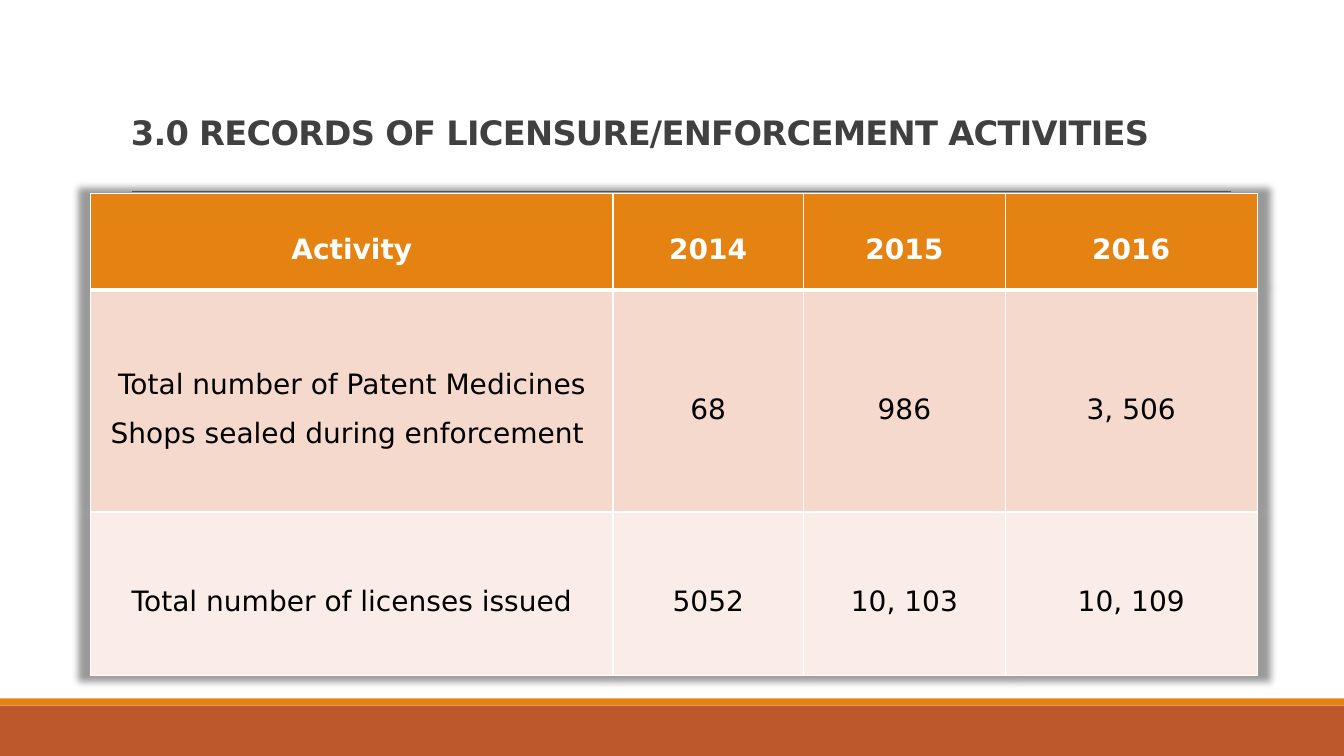
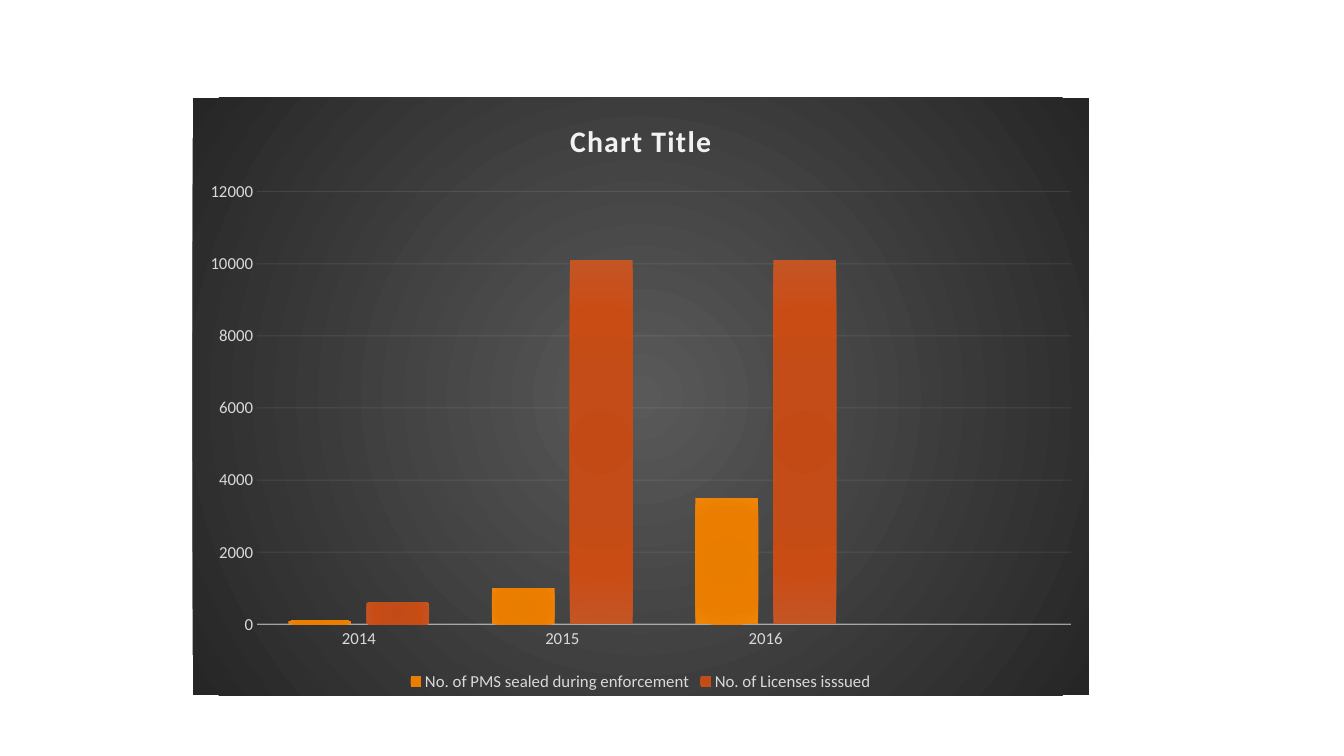
from pptx import Presentation
from pptx import util as u
from pptx.chart.data import CategoryChartData
from pptx.dml.color import RGBColor
from pptx.enum import chart as ch, shapes, text
from pptx.oxml import parse_xml
from pptx.oxml.ns import nsdecls, qn

# Content
TITLE = "3.0 RECORDS OF LICENSURE/ENFORCEMENT ACTIVITIES"
ROWS = [
    ("Activity", "2014", "2015", "2016"),
    ("Total number of Patent Medicines Shops sealed during enforcement ",
     "68", "986", "3, 506"),
    ("Total number of licenses issued", "5052", "10, 103", "10, 109"),
]
YEARS = ["2014", "2015", "2016", ""]
SERIES = [
    ("No. of PMS sealed during enforcement", (100, 1000, 3500, None), "amber"),
    ("No. of Licenses isssued", (600, 10100, 10100, None), "rust"),
]

# Style
W, H = 13.33, 7.5
HEAD, BODY = "DejaVu Sans", "Calibri"
HUES = {
    "orange": "E48312", "brick": "BD582C", "rule": "808080", "ink": "404040",
    "white": "FFFFFF", "black": "000000", "pink": "F5D9CC", "pale": "FAEDE7",
    "label": "D9D9D9", "light": "F2F2F2",
}
FADES = {
    "amber": [(0, "E57B00"), (34, "E87D00"), (70, "EB7E00"), (100, "EF8407")],
    "rust": [(0, "C44A15"), (34, "C34C18"), (70, "C94C15"), (100, "C45525")],
    "night": [(0, "595959"), (100, "262626")],
}
BANDS = [(7, 0.5, "brick"), (6.93, 0.07, "orange")]
COLS, TALL = (5.18, 1.89, 2, 2.5), (0.96, 2.2, 1.62)
FILLS = ("orange", "pink", "pale")


def hue(name):
    return RGBColor.from_string(HUES[name])


def box(*sides):
    return [u.Inches(s) for s in sides]


def style(font, size, name, face, bold=False):
    font.size, font.name, font.bold = u.Pt(size), face, bold
    font.color.rgb = hue(name)


def xml(body, tag):
    return parse_xml(f"<{tag} {nsdecls('a', 'c')}>{body}</{tag}>")


def fade(name, focus):
    stops = "".join(f'<a:gs pos="{p * 1000}"><a:srgbClr val="{c}"/></a:gs>'
                    for p, c in FADES[name])
    rect = " ".join(f'{side}="{focus * 1000}"' for side in "ltrb")
    return xml(f'<a:gsLst>{stops}</a:gsLst><a:path path="circle">'
               f'<a:fillToRect {rect}/></a:path>', "a:gradFill")


def frame(slide):
    """Footer bands and the rule under the title."""
    for top, high, name in BANDS:
        band = slide.shapes.add_shape(shapes.MSO_SHAPE.RECTANGLE,
                                      *box(0, top, W, high))
        band.shadow.inherit = False
        band.fill.solid()
        band.fill.fore_color.rgb = hue(name)
        band.line.fill.background()
    rule = slide.shapes.add_connector(shapes.MSO_CONNECTOR.STRAIGHT,
                                      *box(1.31, 1.9, 12.21, 1.9))
    rule.line.color.rgb, rule.line.width = hue("rule"), u.Pt(0.5)
    rule._element.spPr.append(xml("", "a:effectLst"))


def title(slide, words):
    frm = slide.shapes.add_textbox(*box(1.2, 0.31, 11, 1.25)).text_frame
    frm.word_wrap, frm.vertical_anchor = True, text.MSO_ANCHOR.BOTTOM
    para = frm.paragraphs[0]
    run = para.add_run()
    run.text, para.line_spacing = words, 0.85
    style(para.font, 24, "ink", HEAD, True)
    run.font._element.set("spc", "-50")


def edge(cell, row):
    """White borders, heavier between the header and the body."""
    thick = {"L": 1, "R": 1, "T": 3 if row == 1 else 1, "B": 1 if row else 3}
    for i, (side, wide) in enumerate(thick.items()):
        line = xml(f'<a:solidFill><a:srgbClr val="{HUES["white"]}"/>'
                   '</a:solidFill>', f"a:ln{side}")
        line.set("w", str(u.Pt(wide)))
        cell._tc.get_or_add_tcPr().insert(i, line)


def grid(slide):
    tab = slide.shapes.add_table(len(ROWS), len(COLS),
                                 *box(0.9, 1.92, sum(COLS), sum(TALL))).table
    tab._tbl.tblPr.insert(0, xml(
        '<a:outerShdw blurRad="63500" sx="102000" sy="102000" algn="ctr" '
        'rotWithShape="0"><a:srgbClr val="000000"><a:alpha val="40000"/>'
        '</a:srgbClr></a:outerShdw>', "a:effectLst"))
    for col, wide in zip(tab.columns, COLS):
        col.width = u.Inches(wide)
    for r, words in enumerate(ROWS):
        tab.rows[r].height = u.Inches(TALL[r])
        for c, word in enumerate(words):
            cell = tab.cell(r, c)
            cell.text = word
            cell.vertical_anchor = text.MSO_ANCHOR.MIDDLE
            cell.margin_left = cell.margin_right = u.Inches(0.07)
            cell.margin_top = cell.margin_bottom = 0
            cell.fill.solid()
            cell.fill.fore_color.rgb = hue(FILLS[r])
            para = cell.text_frame.paragraphs[0]
            para.alignment = text.PP_ALIGN.CENTER
            para.line_spacing, para.space_after = 1.5, u.Pt(10)
            style(para.font, 20, "black" if r else "white", HEAD, r == 0)
            edge(cell, r)


def stroke(part, node, wide, alpha):
    """Light line of the given opacity in percent."""
    line = part.format.line
    line.color.rgb, line.width = hue("light"), u.Pt(wide)
    for tone in node.iter(qn("a:srgbClr")):
        tone.append(xml("", "a:alpha"))
        tone[-1].set("val", str(alpha * 1000))


def graph(slide):
    data = CategoryChartData()
    data.categories = YEARS
    for name, vals, _ in SERIES:
        data.add_series(name, vals)
    chart = slide.shapes.add_chart(ch.XL_CHART_TYPE.COLUMN_CLUSTERED,
                                   *box(1.91, 0.97, 8.89, 5.93), data).chart
    style(chart.font, 10, "black", BODY)
    back = xml("", "c:spPr")
    back.append(fade("night", 50))
    back.append(xml("<a:noFill/>", "a:ln"))
    chart._chartSpace.find(qn("c:chart")).addnext(back)

    # Title and legend
    chart.has_title = chart.has_legend = True
    head = chart.chart_title.text_frame
    head.text = "Chart Title"
    run = head.paragraphs[0].runs[0]
    style(run.font, 21.3, "light", BODY, True)
    run.font._element.set("spc", "100")
    chart.chart_title.include_in_layout = False
    key = chart.legend
    key.position, key.include_in_layout = ch.XL_LEGEND_POSITION.BOTTOM, False
    style(key.font, 12, "label", BODY)

    # Axes
    cat, val = chart.category_axis, chart.value_axis
    for axis in (cat, val):
        axis.major_tick_mark = axis.minor_tick_mark = ch.XL_TICK_MARK.NONE
        style(axis.tick_labels.font, 12, "label", BODY)
    val.minimum_scale, val.maximum_scale, val.major_unit = 0, 12000, 2000
    val.format.line.fill.background()
    val.has_major_gridlines = True
    stroke(val.major_gridlines, val._element.find(qn("c:majorGridlines")),
           0.75, 10)
    cat.format.line.width = u.Pt(1)
    stroke(cat, cat._element.find(qn("c:spPr")), 1, 54)

    # Columns
    plot = chart.plots[0]
    plot.gap_width, plot.overlap, plot.vary_by_categories = 100, -24, False
    for ser, (_, _, name) in zip(plot.series, SERIES):
        ser.invert_if_negative = False
        ser._element.get_or_add_spPr().append(fade(name, 100))


def main():
    prs = Presentation()
    prs.slide_width, prs.slide_height = box(W, H)
    first, last = [prs.slides.add_slide(prs.slide_layouts[6])
                   for _ in range(2)]
    frame(first)
    title(first, TITLE)
    grid(first)
    graph(last)
    prs.save("out.pptx")


if __name__ == "__main__":
    main()
